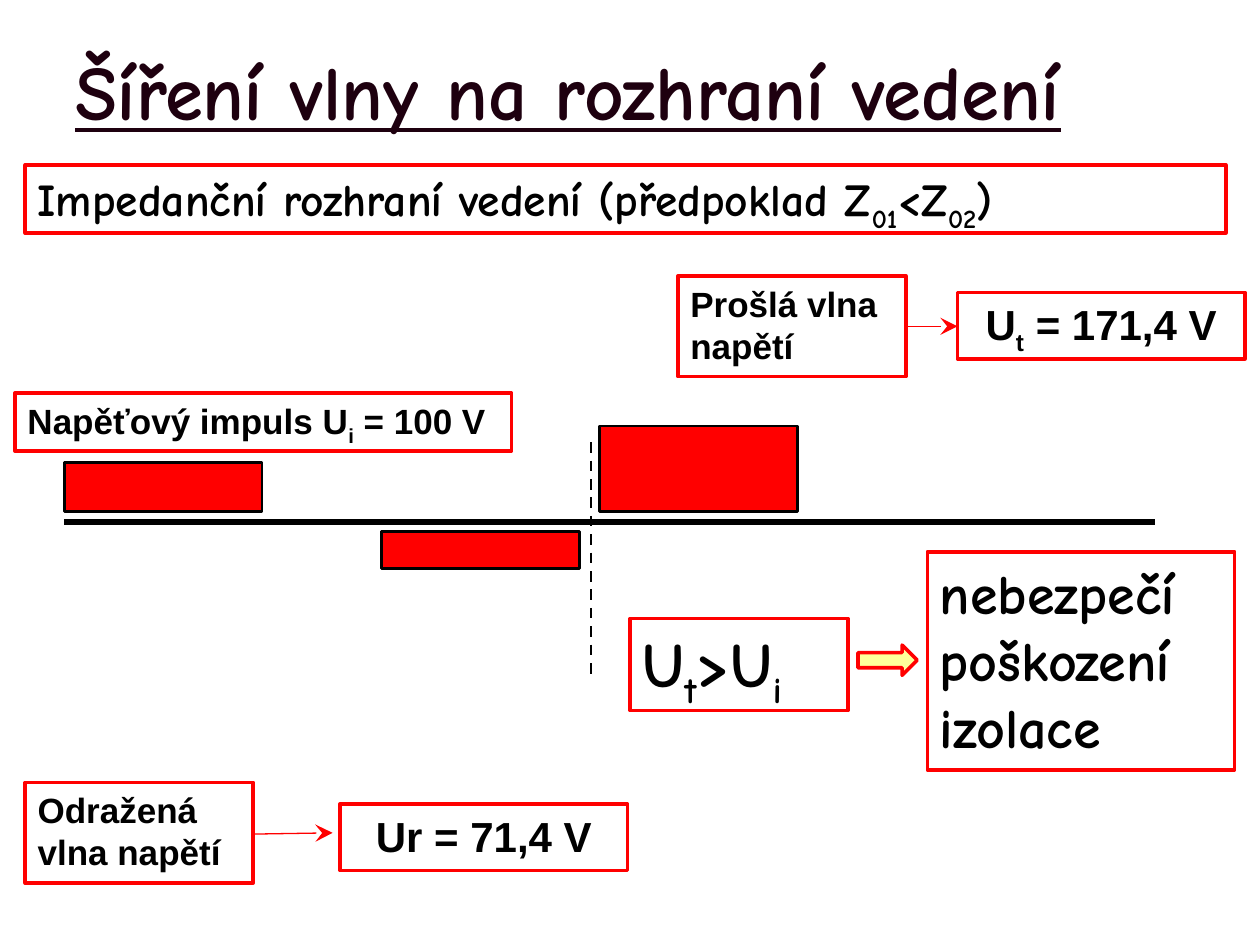
from lxml.etree import SubElement
from pptx import Presentation
from pptx.dml.color import RGBColor
from pptx.enum.dml import MSO_LINE
from pptx.enum.shapes import MSO_CONNECTOR, MSO_SHAPE
from pptx.enum.text import MSO_ANCHOR, PP_ALIGN
from pptx.oxml.ns import qn
from pptx.util import Inches, Pt

RED = RGBColor(0xFF, 0, 0)
BLACK = RGBColor(0, 0, 0)
WHITE = RGBColor(0xFF, 0xFF, 0xFF)
CREAM = RGBColor(0xFF, 0xFF, 0x99)
PLUM = RGBColor(0x1E, 0, 0x0F)
COMIC, ARIAL = "Comic Neue", "Arial"


class Board:
    """Holds the style and the current slide; lengths are in inches."""

    frame = {"word_wrap": True, "vertical_anchor": MSO_ANCHOR.TOP}

    def __init__(self, slide):
        self.slide = slide
        self.shapes = slide.shapes

    def letter(self, shape, text, size, font, align=PP_ALIGN.LEFT, color=BLACK, **extra):
        """Fill a shape with bold text; parts between underscores are subscripts."""
        for key, value in self.frame.items():
            setattr(shape.text_frame, key, value)
        para = shape.text_frame.paragraphs[0]
        para.alignment = align
        style = {"size": Pt(size), "name": font, "bold": True, **extra}
        for i, part in enumerate(text.split("_")):
            if not part:
                continue
            run = para.add_run()
            run.text = part
            for key, value in style.items():
                setattr(run.font, key, value)
            run.font.color.rgb = color
            if i % 2:
                run._r.get_or_add_rPr().set("baseline", "-25000")

    def title(self, area, text):
        box = self.shapes.add_textbox(*map(Inches, area))
        self.letter(box, text, 44, COMIC, color=PLUM, underline=True)
        box.text_frame.vertical_anchor = MSO_ANCHOR.MIDDLE

    def block(self, area, fill, line, width, kind=MSO_SHAPE.RECTANGLE):
        shape = self.shapes.add_shape(kind, *map(Inches, area))
        shape.shadow.inherit = False
        shape.fill.solid()
        shape.fill.fore_color.rgb = fill
        shape.line.color.rgb = line
        shape.line.width = Pt(width)
        return shape

    def label(self, area, *text):
        self.letter(self.block(area, WHITE, RED, 2), *text)

    def line(self, ends, color, width, dash=None, arrow=False):
        link = self.shapes.add_connector(MSO_CONNECTOR.STRAIGHT, *map(Inches, ends))
        link.line.color.rgb = color
        link.line.width = Pt(width)
        if dash:
            link.line.dash_style = dash
        props = link._element.spPr
        if arrow:
            SubElement(props.find(qn("a:ln")), qn("a:tailEnd"), type="stealth", w="lg", len="lg")
        SubElement(props, qn("a:effectLst"))


def main():
    deck = Presentation()
    deck.slide_width, deck.slide_height = Inches(10), Inches(7.5)
    board = Board(deck.slides.add_slide(deck.slide_layouts[6]))

    board.title((0.5, 0.27, 9.17, 0.88), "Šíření vlny na rozhraní vedení")
    board.line((0.51, 4.14, 9.17, 4.14), BLACK, 3.5)
    board.line((4.69, 3.51, 4.69, 5.4), BLACK, 1.5, dash=MSO_LINE.DASH)

    mid = PP_ALIGN.CENTER
    for area, *text in (
        ((0.2, 1.31, 9.53, 0.54), "Impedanční rozhraní vedení (předpoklad Z_01_<Z_02_)", 26, COMIC),
        ((0.12, 3.12, 3.94, 0.46), "Napěťový impuls U_i_ = 100 V", 20, ARIAL),
        ((5.38, 2.19, 1.81, 0.8), "Prošlá vlna napětí", 20, ARIAL),
        ((0.2, 6.21, 1.81, 0.8), "Odražená vlna napětí", 20, ARIAL),
        ((2.7, 6.38, 2.28, 0.53), "Ur = 71,4 V", 24, ARIAL, mid),
        ((7.6, 2.32, 2.28, 0.53), "U_t_ = 171,4 V", 24, ARIAL, mid),
        ((5, 4.91, 1.73, 0.73), "U_t_>U_i_", 36, COMIC),
        ((7.36, 4.38, 2.44, 1.73), "nebezpečí poškození izolace", 32, COMIC),
    ):
        board.label(area, *text)

    for ends in ((2.01, 6.62, 2.64, 6.61), (7.2, 2.59, 7.6, 2.59)):
        board.line(ends, RED, 0.75, arrow=True)

    for left, top, height in ((0.51, 3.67, 0.39), (4.76, 3.38, 0.68), (3.03, 4.22, 0.29)):
        board.block((left, top, 1.57, height), RED, BLACK, 1.5)
    board.block((6.81, 5.12, 0.47, 0.24), CREAM, RED, 2, MSO_SHAPE.RIGHT_ARROW)

    deck.save("out.pptx")


if __name__ == "__main__":
    main()
